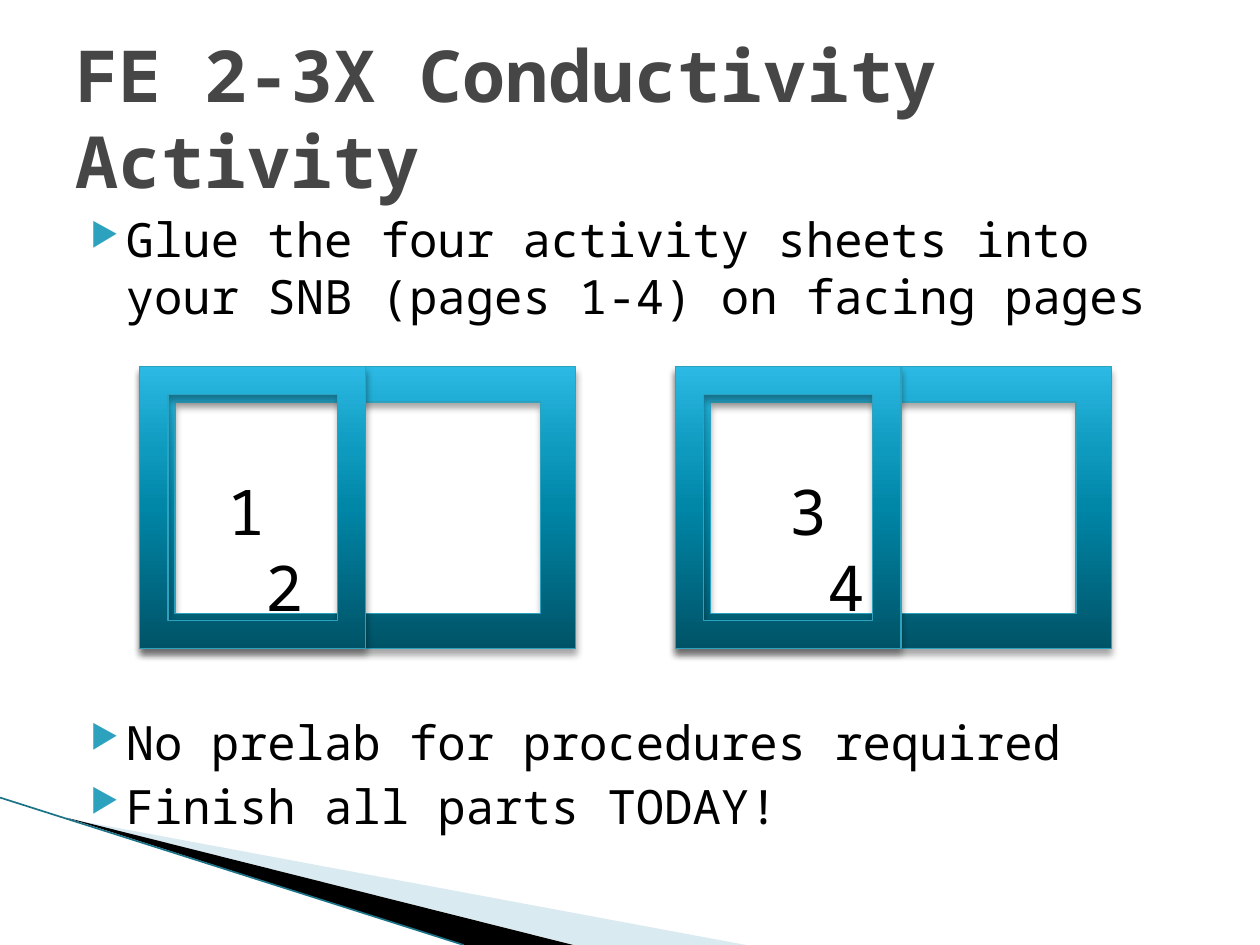
from typing import NamedTuple

from lxml.etree import SubElement as Sub
from pptx import Presentation
from pptx.dml.color import RGBColor as RGB
from pptx.enum.shapes import MSO_CONNECTOR as Conn, MSO_SHAPE as Shape
from pptx.enum.text import MSO_ANCHOR as Anchor
from pptx.oxml.ns import qn
from pptx.util import Inches, Pt

FONT = "Noto Sans Mono"
COLORS = {
    "title": "464646", "text": "000000", "accent": "2DA2BF",
    "pale": "A0CBDC", "black": "000000", "edge": "1B7388",
}
STOPS = {0: "005367", 50: "0086A7", 70: "0E9ABE", 100: "2CB9E3"}
TOP, HIGH = 2.91, 2.24
WIDE, NARROW = 3.46, 1.79


class Box(NamedTuple):
    left: float
    top: float
    width: float
    height: float


class Spread(NamedTuple):
    """Two facing pages, with the page numbers set on the left one."""
    left: float
    label: Box
    pages: str
    indent: float


SPREADS = [
    Spread(1.11, Box(1.71, 3.7, 2.46, 0.71), "1\v2", 0.3),
    Spread(5.36, Box(5.87, 3.7, 2.46, 0.71), "3\v4", 0.6),
]
LISTS = [
    (Box(0.5, 1.62, 9, 1.1),
     ["Glue the four activity sheets into your SNB (pages 1-4) on facing pages"]),
    (Box(0.5, 5.61, 9, 1.1),
     ["No prelab for procedures required", "Finish all parts TODAY!"]),
]


def rgb(name: str) -> RGB:
    return RGB.from_string(COLORS[name])


def put(obj, form: dict) -> None:
    for key, value in form.items():
        setattr(obj, key, value)


def add_color(parent, color: str, alpha: int = 100) -> None:
    node = Sub(parent, qn("a:srgbClr"), val=color)
    if alpha < 100:
        Sub(node, qn("a:alpha"), val=str(alpha * 1000))


def add_text(slide, box: Box, lines: list[str], size: float,
             color: str = "text", bold: bool = False):
    frame = slide.shapes.add_textbox(*map(Inches, box)).text_frame
    frame.word_wrap = True
    for i, line in enumerate(lines):
        para = frame.add_paragraph() if i else frame.paragraphs[0]
        para.text = line
        for run in para.runs:
            put(run.font, {"name": FONT, "size": Pt(size), "bold": bold})
            run.font.color.rgb = rgb(color)
    return frame


def indent(para, left: float, first: float):
    props = para._p.get_or_add_pPr()
    props.set("marL", str(Inches(left)))
    props.set("indent", str(Inches(first)))
    return props


def add_list(slide, box: Box, lines: list[str]) -> None:
    frame = add_text(slide, box, lines, 27)
    for i, para in enumerate(frame.paragraphs):
        props = indent(para, 0.4, -0.28)
        add_color(Sub(props, qn("a:buClr")), COLORS["accent"])
        Sub(props, qn("a:buSzPct"), val="68000")
        Sub(props, qn("a:buChar"), char="▶")
        para.space_before = Pt(4 if i else 0)


def add_frame(slide, left: float, width: float) -> None:
    """Draw a page frame with a vertical gradient and a soft shadow below."""
    box = Box(left, TOP, width, HIGH)
    shape = slide.shapes.add_shape(Shape.FRAME, *map(Inches, box))
    shape.fill.gradient()
    shape.fill.gradient_angle = 90
    shape.line.color.rgb = rgb("accent")
    shape.line.width = Pt(0.75)
    shape.shadow.inherit = False
    props = shape._element.spPr
    stops = props.find(".//" + qn("a:gsLst"))
    stops.clear()
    for pos, color in STOPS.items():
        add_color(Sub(stops, qn("a:gs"), pos=str(pos * 1000)), color)
    glow = Sub(props.find(qn("a:effectLst")), qn("a:outerShdw"),
               blurRad=str(Pt(4)), dist=str(Pt(3)), dir="5400000", rotWithShape="0")
    add_color(glow, COLORS["black"], 35)


def add_wedge(slide, points: list[tuple], color: str, alpha: int = 100) -> None:
    start, *rest = [(Inches(x), Inches(y)) for x, y in points]
    path = slide.shapes.build_freeform(*start)
    path.add_line_segments(rest)
    shape = path.convert_to_shape()
    shape.shadow.inherit = False
    shape.fill.solid()
    shape.fill.fore_color.rgb = rgb(color)
    shape.line.fill.background()
    if alpha < 100:
        node = shape._element.spPr.find(qn("a:solidFill")).find(qn("a:srgbClr"))
        Sub(node, qn("a:alpha"), val=str(alpha * 1000))


def add_corner(slide) -> None:
    add_wedge(slide, [(0.55, 6.5), (5.92, 7.5), (4.56, 7.5)], "pale", 40)
    add_wedge(slide, [(0.53, 6.49), (4.55, 7.5), (3.68, 7.5)], "black")
    ends = map(Inches, (0, 6.33, 3.68, 7.5))
    edge = slide.shapes.add_connector(Conn.STRAIGHT, *ends)
    edge.line.color.rgb = rgb("edge")
    edge.line.width = Pt(0.95)
    Sub(edge._element.spPr, qn("a:effectLst"))


def main() -> None:
    deck = Presentation()
    put(deck, {"slide_width": Inches(10), "slide_height": Inches(7.5)})
    slide = deck.slides.add_slide(deck.slide_layouts[6])
    add_corner(slide)
    for box, lines in LISTS:
        add_list(slide, box, lines)
    title = add_text(slide, Box(0.5, 0.3, 9, 1.25),
                     ["FE 2-3X Conductivity Activity"], 41, "title", True)
    title.vertical_anchor = Anchor.MIDDLE
    for spread in SPREADS:
        add_frame(slide, spread.left, WIDE)
        label = add_text(slide, spread.label, [spread.pages], 36)
        indent(label.paragraphs[0], spread.indent, -0.3)
        add_frame(slide, spread.left, NARROW)
    deck.save("out.pptx")


if __name__ == "__main__":
    main()
